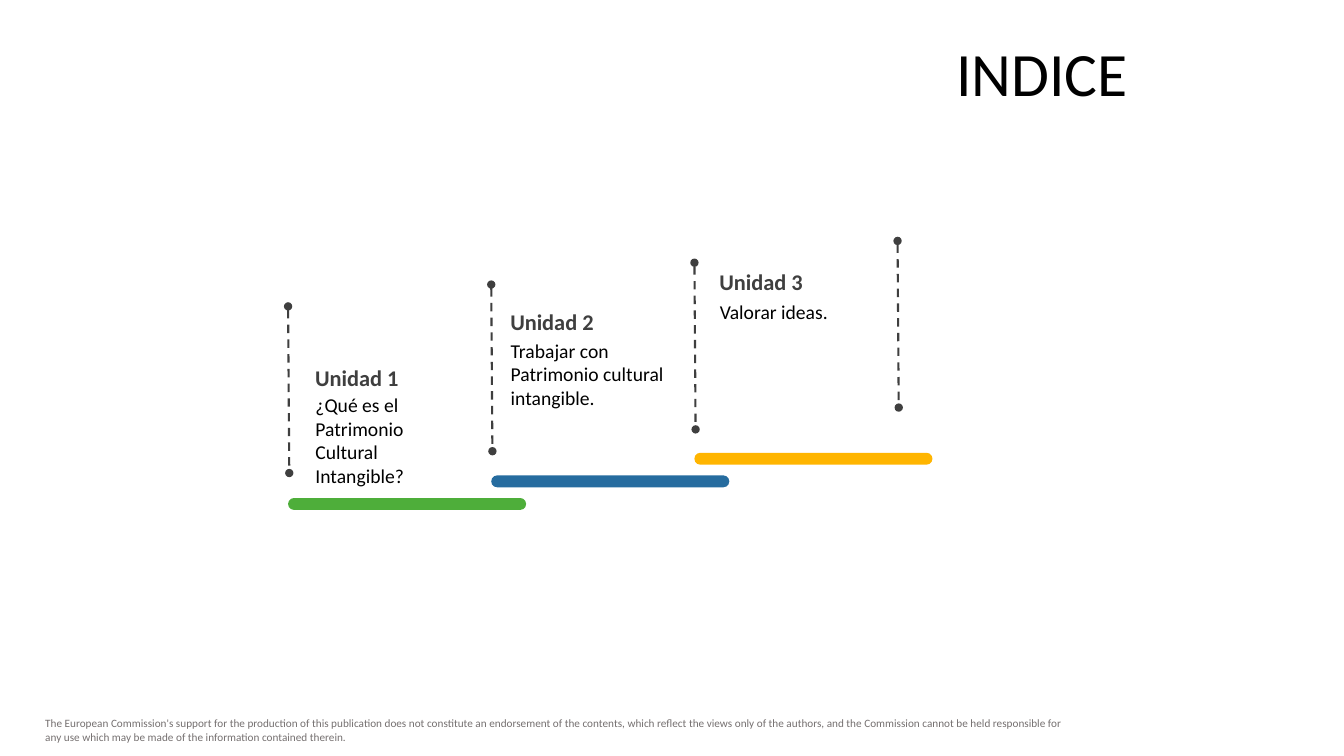
from pptx import Presentation
from pptx.dml.color import RGBColor
from pptx.enum.dml import MSO_LINE_DASH_STYLE as Dash
from pptx.enum.shapes import MSO_CONNECTOR as Connector, MSO_SHAPE as Shape
from pptx.enum.text import MSO_ANCHOR as Anchor, PP_ALIGN as Align
from pptx.oxml.ns import qn
from pptx.util import Cm, Pt
from lxml.etree import SubElement

DARK = "3F3F3F"
TITLE = {"size": Pt(44), "color": "000000"}
HEADING = {"size": Pt(16), "color": DARK, "bold": True}
BODY = {"size": Pt(14), "color": "000000"}
NOTICE = {"size": Pt(8), "color": "757070"}

UNITS = [
    {"heading": "Unidad 1", "body": "¿Qué es el Patrimonio Cultural Intangible?",
     "color": "4EAE3A", "inset": 0.38, "drop": 1.32, "gap": 0.74, "width": 4.37},
    {"heading": "Unidad 2", "body": "Trabajar con Patrimonio cultural intangible.",
     "color": "266C9F", "inset": 0.18, "drop": 0.48, "gap": 0.76, "width": 4.62},
    {"heading": "Unidad 3", "body": "Valorar ideas.",
     "color": "FFB500", "inset": 0.33, "drop": 0, "gap": 0.81, "width": 4.37},
]


def rgb(value):
    """Return the colour for a hex string."""
    return RGBColor.from_string(value)


def add_text(page, box, text, look, side=0.25, anchor=Anchor.TOP, align=Align.LEFT, spacing=1.0):
    """Add a wrapped one-paragraph text box."""
    frame = page.shapes.add_textbox(*map(Cm, box)).text_frame
    layout = {"word_wrap": True, "vertical_anchor": anchor,
              "margin_left": Cm(side), "margin_right": Cm(side)}
    for name, value in layout.items():
        setattr(frame, name, value)
    para = frame.paragraphs[0]
    para.alignment = align
    para.line_spacing = spacing
    span = para.add_run()
    span.text = text
    span.font.name = "Calibri"
    for name, value in look.items():
        if name == "color":
            span.font.color.rgb = rgb(value)
        else:
            setattr(span.font, name, value)


def add_post(page, left, top):
    """Add a dashed post with a dot at each end."""
    ends = (left, top, left + 0.03, top + 4.2)
    post = page.shapes.add_connector(Connector.STRAIGHT, *map(Cm, ends))
    post.line.color.rgb = rgb(DARK)
    post.line.width = Pt(1.5)
    post.line.dash_style = Dash.DASH
    outline = post.line._get_or_add_ln()
    for end in ("a:headEnd", "a:tailEnd"):
        SubElement(outline, qn(end), type="oval")
    SubElement(post._element.spPr, qn("a:effectLst"))


def add_bar(page, box, color):
    """Add a fully rounded bar without outline."""
    bar = page.shapes.add_shape(Shape.ROUNDED_RECTANGLE, *map(Cm, box))
    bar.adjustments[0] = 0.5
    bar.shadow.inherit = False
    bar.fill.solid()
    bar.fill.fore_color.rgb = rgb(color)
    bar.line.fill.background()


def add_unit(page, left, top, unit):
    """Place a unit's heading and body relative to the top of its post."""
    left, top = left + unit["inset"], top + unit["drop"]
    add_text(page, (left, top, 4.38, 0.94), unit["heading"], HEADING, side=0.3)
    body_box = (left + 0.06, top + unit["gap"], unit["width"], 0.86)
    add_text(page, body_box, unit["body"], BODY)


def add_staircase(page, left, top):
    """Place the rising steps from the top of the first post."""
    step, post_rise, bar_rise, bar_drop = 5.12, 0.55, 0.57, 4.83
    for index, unit in enumerate(UNITS):
        x = left + index * step
        add_bar(page, (x, top + bar_drop - index * bar_rise, 6, 0.3), unit["color"])
        add_unit(page, x, top - index * post_rise, unit)
    for index in range(len(UNITS) + 1):
        add_post(page, left + index * step, top - index * post_rise)


def main():
    """Build the index slide."""
    deck = Presentation()
    deck.slide_width, deck.slide_height = Cm(33.87), Cm(19.05)
    page = deck.slides.add_slide(deck.slide_layouts[6])
    add_text(page, (0.89, 17.93, 26.57, 0.94),
             "The European Commission's support for the production of this publication does not "
             "constitute an endorsement of the contents, which reflect the views only of the "
             "authors, and the Commission cannot be held responsible for any use which may be "
             "made of the information contained therein.", NOTICE)
    add_text(page, (6.81, 0.94, 21.87, 2), "INDICE", TITLE,
             anchor=Anchor.MIDDLE, align=Align.RIGHT, spacing=0.9)
    add_staircase(page, 7.26, 7.72)
    deck.save("out.pptx")


if __name__ == "__main__":
    main()
